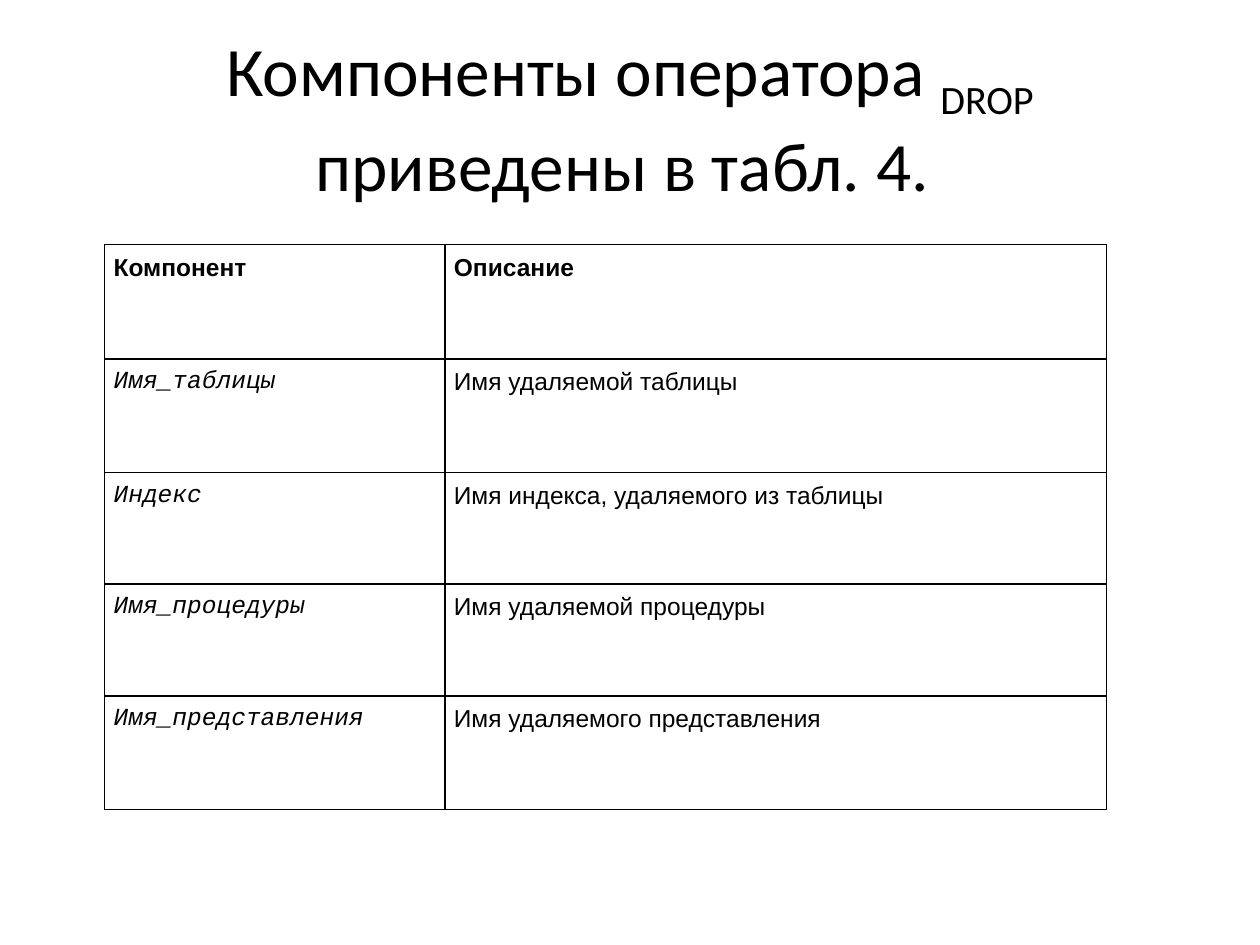
from lxml.etree import SubElement
from pptx import Presentation
from pptx.dml.color import RGBColor
from pptx.enum.text import MSO_ANCHOR, PP_ALIGN
from pptx.oxml.ns import qn
from pptx.util import Cm, Pt

COLORS = {"ink": "000000", "paper": "FFFFFF"}
COLUMN_WIDTHS = [6.86, 13.34]
ROW_HEIGHTS = [2.31, 2.29, 2.24, 2.26, 2.29]
ROWS = [
    ("Компонент", "Описание"),
    ("Имя_таблицы", "Имя удаляемой таблицы"),
    ("Индекс", "Имя индекса, удаляемого из таблицы"),
    ("Имя_процедуры", "Имя удаляемой процедуры"),
    ("Имя_представления", "Имя удаляемого представления"),
]


def add_text(paragraph, text, font="Arial", size=14, bold=False, italic=False, baseline=0):
    """Append a formatted run to a paragraph."""
    run = paragraph.add_run()
    run.text = text
    run.font.name = font
    run.font.size = Pt(size)
    run.font.bold = bold
    run.font.italic = italic
    run.font.color.rgb = RGBColor.from_string(COLORS["ink"])
    if baseline:
        run.font._element.set("baseline", str(baseline * 1000))


class SlideBuilder:
    """Hold the title style and the current slide."""

    title_font = "Calibri"
    title_size = 39.6
    border_width = 1

    def __init__(self, slide):
        """Keep the slide and paint its background."""
        self.slide = slide
        fill = slide.background.fill
        fill.solid()
        fill.fore_color.rgb = RGBColor.from_string(COLORS["paper"])

    def title(self, parts, left, top, width, height):
        """Add a centred title from pairs of text and baseline."""
        shape = self.slide.shapes.add_textbox(Cm(left), Cm(top), Cm(width), Cm(height))
        frame = shape.text_frame
        frame.word_wrap = True
        frame.vertical_anchor = MSO_ANCHOR.MIDDLE
        paragraph = frame.paragraphs[0]
        paragraph.alignment = PP_ALIGN.CENTER
        for text, baseline in parts:
            add_text(paragraph, text, font=self.title_font, size=self.title_size, baseline=baseline)

    def table(self, rows, widths, heights, left, top):
        """Add a bordered table with a bold header and italic names."""
        shape = self.slide.shapes.add_table(
            len(rows), len(widths), Cm(left), Cm(top), Cm(sum(widths)), Cm(sum(heights))
        )
        table = shape.table
        for column, width in zip(table.columns, widths):
            column.width = Cm(width)
        for row, height in zip(table.rows, heights):
            row.height = Cm(height)
        for row_index, row in enumerate(rows):
            for column_index, text in enumerate(row):
                header = row_index == 0
                name = column_index == 0 and not header
                self.cell(
                    table.cell(row_index, column_index),
                    text,
                    font="Courier New" if name else "Arial",
                    bold=header,
                    italic=name,
                )

    def cell(self, cell, text, **text_format):
        """Fill one table cell and draw its borders."""
        cell.margin_left, cell.margin_top = Cm(0.18), Cm(0.15)
        cell.margin_right, cell.margin_bottom = Cm(0.2), Cm(0)
        paragraph = cell.text_frame.paragraphs[0]
        paragraph.line_spacing = 1.07
        add_text(paragraph, text, **text_format)
        properties = cell._tc.get_or_add_tcPr()
        for side in ("a:lnL", "a:lnR", "a:lnT", "a:lnB"):
            line = SubElement(properties, qn(side), w=str(Pt(self.border_width)))
            fill = SubElement(line, qn("a:solidFill"))
            SubElement(fill, qn("a:srgbClr"), val=COLORS["ink"])
        cell.fill.solid()
        cell.fill.fore_color.rgb = RGBColor.from_string(COLORS["paper"])


def main():
    """Build and save the presentation."""
    presentation = Presentation()
    presentation.slide_width, presentation.slide_height = Cm(25.4), Cm(19.05)
    builder = SlideBuilder(presentation.slides.add_slide(presentation.slide_layouts[6]))
    builder.title(
        [("Компоненты оператора ", 0), ("DROP", -25), (" приведены в табл. 4. ", 0)],
        left=1.27, top=0.76, width=22.86, height=3.18,
    )
    builder.table(ROWS, COLUMN_WIDTHS, ROW_HEIGHTS, left=2.11, top=4.93)
    presentation.save("out.pptx")


if __name__ == "__main__":
    main()
